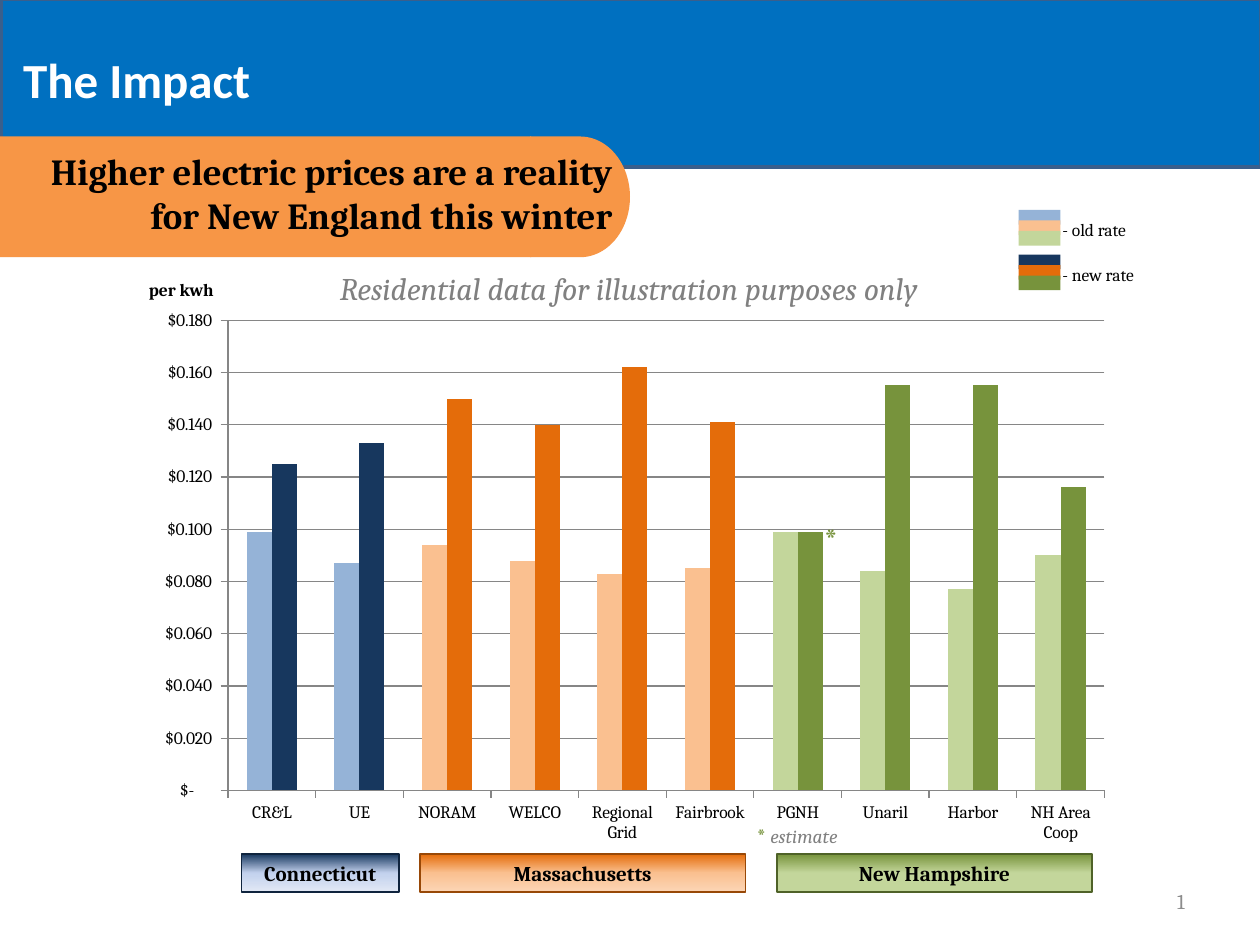
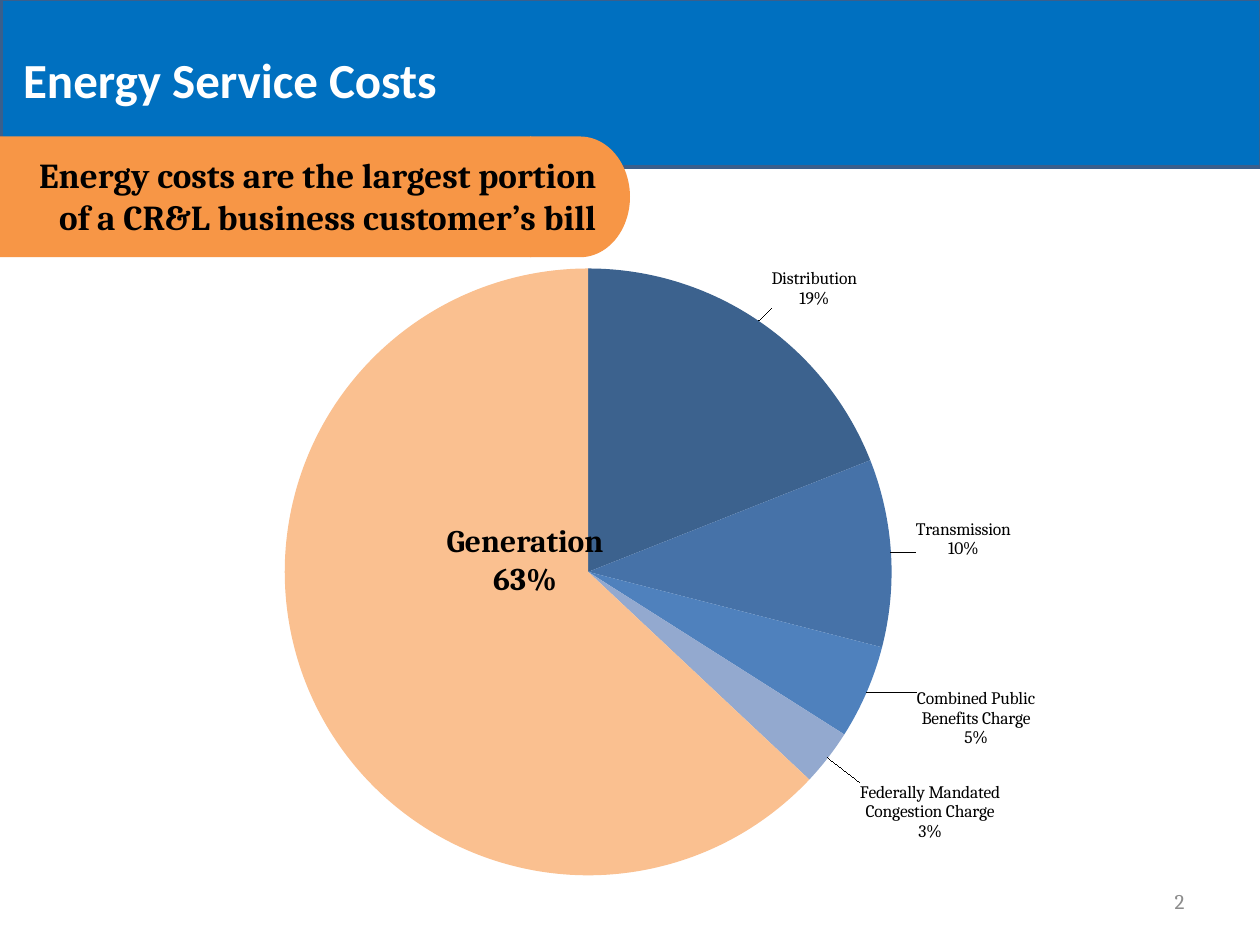
from copy import deepcopy
from typing import NamedTuple

from lxml import etree
from pptx import Presentation
from pptx import util as u
from pptx.chart.data import CategoryChartData
from pptx.dml.color import RGBColor
from pptx.enum import chart as ch, shapes, text
from pptx.oxml import parse_xml
from pptx.oxml.ns import nsdecls, qn

COLS, ROWS = 120, 90
CELL = u.Inches(10) // COLS
HEAD, SERIF = "Calibri", "Cambria"
C = {
    "blue": "0070C0", "edge": "3A5F8C", "tab": "F79646",
    "white": "FFFFFF", "black": "000000", "grey": "808080",
    "number": "8C8C8C", "axis": "868686", "leaf": "77933C",
}
LEFT, CENTER, RIGHT = (text.PP_ALIGN.LEFT, text.PP_ALIGN.CENTER,
                       text.PP_ALIGN.RIGHT)
MIDDLE, TOP = text.MSO_ANCHOR.MIDDLE, text.MSO_ANCHOR.TOP
RECT = shapes.MSO_SHAPE.RECTANGLE


class Box(NamedTuple):
    """An area in grid columns and rows."""
    col: float
    row: float
    cols: float
    rows: float

    def emu(self) -> list[int]:
        return [round(n * CELL) for n in self]


class State(NamedTuple):
    name: str
    col: float
    cols: float
    old: str
    new: str
    edge: str
    middle: str
    end: str
    utilities: list[tuple[str, float, float]]


class Slice(NamedTuple):
    name: str
    percent: int
    color: str
    label: str = ""
    dx: float = 0
    dy: float = 0


STATES = [
    State("Connecticut", 23, 15, "95B3D7", "17375E", "0F243E", "C2D1ED",
          "E1E8F5", [("CR&L", 0.099, 0.125), ("UE", 0.087, 0.133)]),
    State("Massachusetts", 40, 31, "FAC090", "E46C0A", "984807", "FAC090",
          "FCD5B5", [("NORAM", 0.094, 0.15), ("WELCO", 0.088, 0.14),
                     ("Regional Grid", 0.083, 0.162),
                     ("Fairbrook", 0.085, 0.141)]),
    State("New Hampshire", 74, 30, "C3D69B", "77933C", "4F6228", "C3D69B",
          "C3D69B", [("PGNH", 0.099, 0.099), ("Unaril", 0.084, 0.155),
                     ("Harbor", 0.077, 0.155),
                     ("NH Area Coop", 0.09, 0.116)]),
]
SLICES = [
    Slice("Distribution", 19, "3C628E", "Distribution\n19%", 0.01, -0.01),
    Slice("Transmission", 10, "4672A8", "Transmission\n10%", 0.02, -0.02),
    Slice("CPBC", 5, "4F81BD",
          "Combined Public\nBenefits Charge\n5%", 0.05, -0.01),
    Slice("FMCC", 3, "93A9CF",
          "Federally Mandated\nCongestion Charge\n3%", 0.03, 0.03),
    Slice("Generation", 63, "FAC090"),
]


def rgb(color: str) -> RGBColor:
    return RGBColor.from_string(color)


def style(font, size: float, color: str = C["black"], name: str = SERIF,
          bold: bool = False, italic: bool = False) -> None:
    font.size, font.name = u.Pt(size), name
    font.bold, font.italic = bold, italic
    font.color.rgb = rgb(color)


def write(sp, content: str, align=LEFT, anchor=TOP, **fmt) -> None:
    tf = sp.text_frame
    tf.word_wrap, tf.vertical_anchor = True, anchor
    tf.text = content
    for p in tf.paragraphs:
        p.alignment = align
        for r in p.runs:
            style(r.font, **fmt)


def add_text(s, box: Box, content: str, **fmt):
    sp = s.shapes.add_textbox(*box.emu())
    write(sp, content, **fmt)
    return sp


def add_block(s, box: Box, color: str, kind=RECT, line: str = "",
              width: float = 0.75):
    sp = s.shapes.add_shape(kind, *box.emu())
    sp.shadow.inherit = False
    sp.fill.solid()
    sp.fill.fore_color.rgb = rgb(color)
    if line:
        sp.line.color.rgb = rgb(line)
        sp.line.width = u.Pt(width)
    else:
        sp.line.fill.background()
    return sp


def fade(sp, colors: list[str]) -> None:
    """Fill a shape from top to bottom with evenly spaced colours."""
    sp.fill.gradient()
    sp.fill.gradient_angle = 270
    stops = sp._element.spPr.find(qn("a:gradFill")).find(qn("a:gsLst"))
    while len(stops) < len(colors):
        stops.append(deepcopy(stops[0]))
    for i, (stop, color) in enumerate(zip(sp.fill.gradient_stops, colors)):
        stop.color.rgb = rgb(color)
        stop.position = i / (len(colors) - 1)


def add_slide_number(s, number: int) -> None:
    sp = add_text(s, Box(86, 83.4, 28, 4.8), str(number), size=12,
                  color=C["number"], align=RIGHT, anchor=MIDDLE)
    r = sp.text_frame.paragraphs[0].runs[0]._r
    fld = parse_xml(f'<a:fld {nsdecls("a")} type="slidenum" '
                    'id="{B6F15528-21DE-4FAA-801E-634DDDAF4B2B}"/>')
    r.addprevious(fld)
    fld.extend(list(r))
    r.getparent().remove(r)


def add_base(prs, number: int, title: str, message: str, box: Box,
             size: float, anchor):
    """Add a slide with the blue band, title, orange tab and number."""
    s = prs.slides.add_slide(prs.slide_layouts[5])
    add_block(s, Box(0.1, -0.1, COLS, 16), C["blue"], line=C["edge"], width=2)
    add_block(s, Box(50.5, 13, 9.5, 11.5), C["tab"],
              shapes.MSO_SHAPE.FLOWCHART_DELAY)
    add_block(s, Box(0, 13, 50.6, 11.5), C["tab"])
    heading = s.shapes.title
    s.shapes._spTree.append(heading._element)
    heading.left, heading.top, heading.width, heading.height = Box(
        1, 0, 108, 15).emu()
    write(heading, title, size=28, color=C["white"], name=HEAD, bold=True,
          anchor=MIDDLE)
    add_text(s, box, message, size=size, bold=True, align=RIGHT,
             anchor=anchor)
    add_slide_number(s, number)
    return s


def layout_xml(x: float, y: float, w: float = 0, h: float = 0):
    """A manual layout: a plot area if it has a size, else a label offset."""
    parts = {"x": x, "y": y}
    if w:
        parts = {"layoutTarget": "inner", "xMode": "edge", "yMode": "edge",
                 **parts, "w": w, "h": h}
    body = "".join(f'<c:{tag} val="{val}"/>' for tag, val in parts.items())
    return parse_xml(f'<c:layout {nsdecls("c")}><c:manualLayout>{body}'
                     '</c:manualLayout></c:layout>')


def add_chart(s, kind, box: Box, data: CategoryChartData, area: tuple):
    chart = s.shapes.add_chart(kind, *box.emu(), data).chart
    chart.has_title = chart.has_legend = False
    style(chart.font, 10)
    plot_area = chart._chartSpace.chart.plotArea
    for old in plot_area.findall(qn("c:layout")):
        plot_area.remove(old)
    plot_area.insert(0, layout_xml(*area))
    return chart


def color_point(series, index: int, color: str) -> None:
    fmt = series.points[index].format
    fmt.fill.solid()
    fmt.fill.fore_color.rgb = rgb(color)
    fmt.line.fill.background()


def add_rate_chart(s) -> None:
    rates = [(st, *row) for st in STATES for row in st.utilities]
    data = CategoryChartData(number_format="0.000")
    data.categories = [name for _, name, _, _ in rates]
    data.add_series("Old rate", [old for _, _, old, _ in rates])
    data.add_series("New rate", [new for _, _, _, new in rates])
    chart = add_chart(s, ch.XL_CHART_TYPE.COLUMN_CLUSTERED,
                      Box(12.5, 29.5, 94, 52.7), data,
                      (0.098, 0.019, 0.888, 0.85))
    plot = chart.plots[0]
    plot.gap_width, plot.overlap, plot.vary_by_categories = 150, 0, False
    for i, (st, *_) in enumerate(rates):
        for series, color in zip(plot.series, (st.old, st.new)):
            color_point(series, i, color)
    val = chart.value_axis
    val.minimum_scale, val.maximum_scale, val.major_unit = 0, 0.18, 0.02
    val.has_major_gridlines = True
    val.tick_labels.number_format = (
        '_("$"* #,##0.000_);_("$"* \\(#,##0.000\\);_("$"* "-"??_);_(@_)')
    val.tick_labels.number_format_is_linked = False
    for axis in (val, chart.category_axis):
        axis.major_tick_mark = ch.XL_TICK_MARK.OUTSIDE
        axis.minor_tick_mark = ch.XL_TICK_MARK.NONE
    for part in (val, val.major_gridlines, chart.category_axis):
        part.format.line.color.rgb = rgb(C["axis"])
        part.format.line.width = u.Pt(0.75)


def add_legend(s, row: float, label: str, colors: list[str]) -> None:
    for i, color in enumerate(colors):
        add_block(s, Box(97, row + i, 4, 1.4), color)
    add_text(s, Box(100, row + 0.3, 11, 3.2), label, size=10)


def add_cost_chart(s) -> None:
    data = CategoryChartData(number_format="0")
    data.categories = [part.name for part in SLICES]
    data.add_series("Share of bill", [part.percent for part in SLICES])
    chart = add_chart(s, ch.XL_CHART_TYPE.PIE, Box(20, 22, 83, 63.8), data,
                      (0.085, 0.056, 0.698, 0.906))
    series = chart.plots[0].series[0]
    labels = series.data_labels
    labels.show_value = False
    for i, part in enumerate(SLICES):
        color_point(series, i, part.color)
        if not part.label:
            continue
        label = series.points[i].data_label
        label.text_frame.text = part.label
        for p in label.text_frame.paragraphs:
            style(p.runs[0].font, 10)
        label.position = ch.XL_LABEL_POSITION.OUTSIDE_END
        dlbl = series._element.find(qn("c:dLbls")).findall(qn("c:dLbl"))[-1]
        dlbl.find(qn("c:idx")).addnext(layout_xml(part.dx, part.dy))
    dlbls = series._element.find(qn("c:dLbls"))
    if dlbls.find(qn("c:showLeaderLines")) is None:
        etree.SubElement(dlbls, qn("c:showLeaderLines")).set("val", "1")


def build_impact(prs) -> None:
    s = add_base(prs, 8, "The Impact", "Higher electric prices are a reality "
                 "for New England this winter", Box(0, 10.9, 59.5, 15), 21,
                 MIDDLE)
    for st in STATES:
        sp = add_block(s, Box(st.col, 81.35, st.cols, 3.6), st.new,
                       line=st.edge)
        fade(sp, [st.new, st.middle, st.end])
        write(sp, st.name, size=12, bold=True, align=CENTER, anchor=MIDDLE)
    add_text(s, Box(13, 26, 10, 3.2), "per kwh", size=10, bold=True)
    add_legend(s, 20, "- old rate", [st.old for st in STATES])
    add_legend(s, 24.25, "- new rate", [st.new for st in STATES])
    add_text(s, Box(31.2, 25, 66.2, 4.8),
             "Residential data for illustration purposes only", size=18,
             color=C["grey"], italic=True)
    add_rate_chart(s)
    add_text(s, Box(77.3, 48.85, 3, 4.8), "*", size=18, color=C["leaf"])
    note = add_text(s, Box(70.9, 77.75, 11, 3.6), "* ", size=12,
                    color=C["leaf"])
    r = note.text_frame.paragraphs[0].add_run()
    r.text = "estimate"
    style(r.font, 11, C["grey"], italic=True)


def build_costs(prs) -> None:
    s = add_base(prs, 9, "Energy Service Costs", "Energy costs are the "
                 "largest portion of a CR&L business customer’s bill",
                 Box(0, 14, 58, 10.8), 20, TOP)
    add_cost_chart(s)
    add_text(s, Box(39, 49, 22, 8.5), "Generation\n63%", size=18, bold=True,
             align=CENTER)


def main() -> None:
    prs = Presentation()
    prs.slide_width, prs.slide_height = COLS * CELL, ROWS * CELL
    build_impact(prs)
    build_costs(prs)
    prs.save("out.pptx")


if __name__ == "__main__":
    main()
